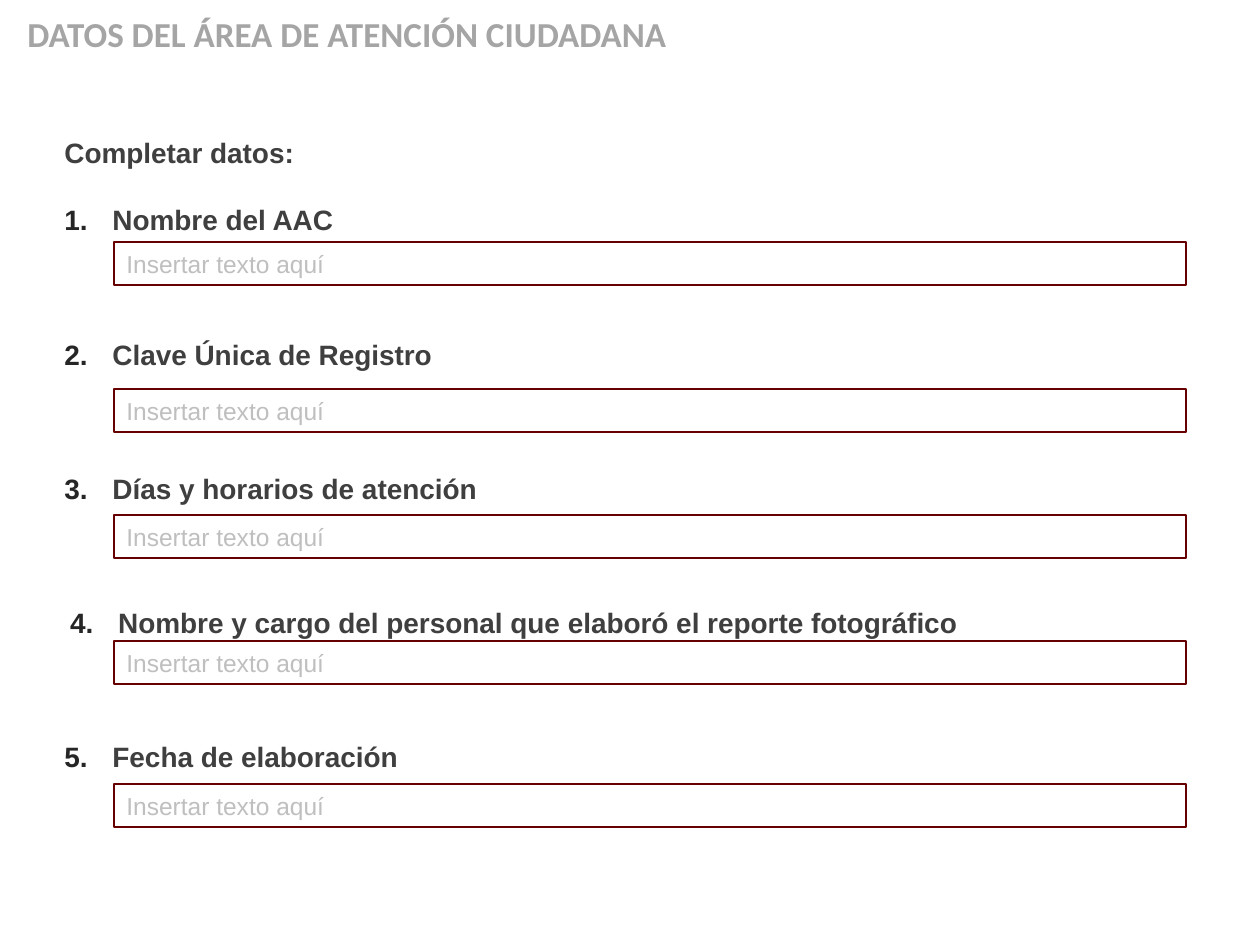
from lxml import etree
from pptx import Presentation
from pptx.dml.color import RGBColor
from pptx.enum.shapes import MSO_SHAPE
from pptx.enum.text import MSO_ANCHOR, PP_ALIGN
from pptx.oxml.ns import qn
from pptx.util import Pt

RECT = MSO_SHAPE.RECTANGLE
MIDDLE = MSO_ANCHOR.MIDDLE
LEFT, CENTER = PP_ALIGN.LEFT, PP_ALIGN.CENTER
PITCH = Pt(38.35)
FIELDS = [
    ("Nombre del AAC", LEFT, 242),
    ("Clave Única de Registro", LEFT, 389),
    ("Días y horarios de atención", LEFT, 515),
    ("Nombre y cargo del personal que elaboró el reporte fotográfico", CENTER, 641),
    ("Fecha de elaboración", LEFT, 784),
]


def px(n):
    """Convert pixels at 126 to the inch into EMU."""
    return round(n * 914400 / 126)


def color(value):
    """Return the colour of a hex string."""
    return RGBColor.from_string(value)


def write(p, text, font, size, fill, bold=False):
    """Set and format the text of a paragraph."""
    p.text = text
    for r in p.runs:
        r.font.name = font
        r.font.size = Pt(size)
        r.font.bold = bold
        r.font.color.rgb = color(fill)


def add_text_box(slide, x, y, w, h):
    """Add a wrapping text box and return its text frame."""
    tf = slide.shapes.add_textbox(px(x), px(y), px(w), px(h)).text_frame
    tf.word_wrap = True
    return tf


def number_paragraph(p, number):
    """Give a paragraph a hanging automatic number."""
    pPr = p._p.get_or_add_pPr()
    pPr.set("marL", str(px(48)))
    pPr.set("indent", str(-px(48)))
    bullet_color = etree.SubElement(pPr, qn("a:buClr"))
    etree.SubElement(bullet_color, qn("a:srgbClr"), val="262626")
    etree.SubElement(pPr, qn("a:buFont"), typeface="+mj-lt")
    etree.SubElement(pPr, qn("a:buAutoNum"), type="arabicPeriod", startAt=str(number))


def add_questions(slide):
    """Add the heading and the numbered field labels."""
    tf = add_text_box(slide, 52, 96, 924, 692)
    p = tf.paragraphs[0]
    write(p, "Completar datos:", "Arial", 16, "3F3F3F", True)
    p.line_spacing = PITCH
    for number, (label, align, _) in enumerate(FIELDS, 1):
        p = tf.add_paragraph()
        write(p, label, "Arial", 16, "3F3F3F", True)
        p.alignment = align
        p.line_spacing = PITCH
        p.space_before = PITCH if number > 1 else Pt(0)
        number_paragraph(p, number)


def add_field(slide, y):
    """Add an outlined input field with its prompt."""
    sp = slide.shapes.add_shape(RECT, px(114), px(y), px(1072), px(43))
    sp.shadow.inherit = False
    sp.fill.background()
    sp.line.color.rgb = color("660000")
    sp.line.width = Pt(0.75)
    tf = sp.text_frame
    tf.word_wrap = True
    tf.vertical_anchor = MIDDLE
    p = tf.paragraphs[0]
    write(p, "Insertar texto aquí", "Arial", 14, "BFBFBF")
    p.alignment = LEFT


def main():
    """Build and save the slide."""
    prs = Presentation()
    prs.slide_width, prs.slide_height = px(1260), px(945)
    slide = prs.slides.add_slide(prs.slide_layouts[6])
    add_questions(slide)
    title = add_text_box(slide, 15, 6, 1106, 55).paragraphs[0]
    write(title, "DATOS DEL ÁREA DE ATENCIÓN CIUDADANA", "Calibri", 20, "A5A5A5", True)
    for _, _, y in FIELDS:
        add_field(slide, y)
    prs.save("out.pptx")


if __name__ == "__main__":
    main()
